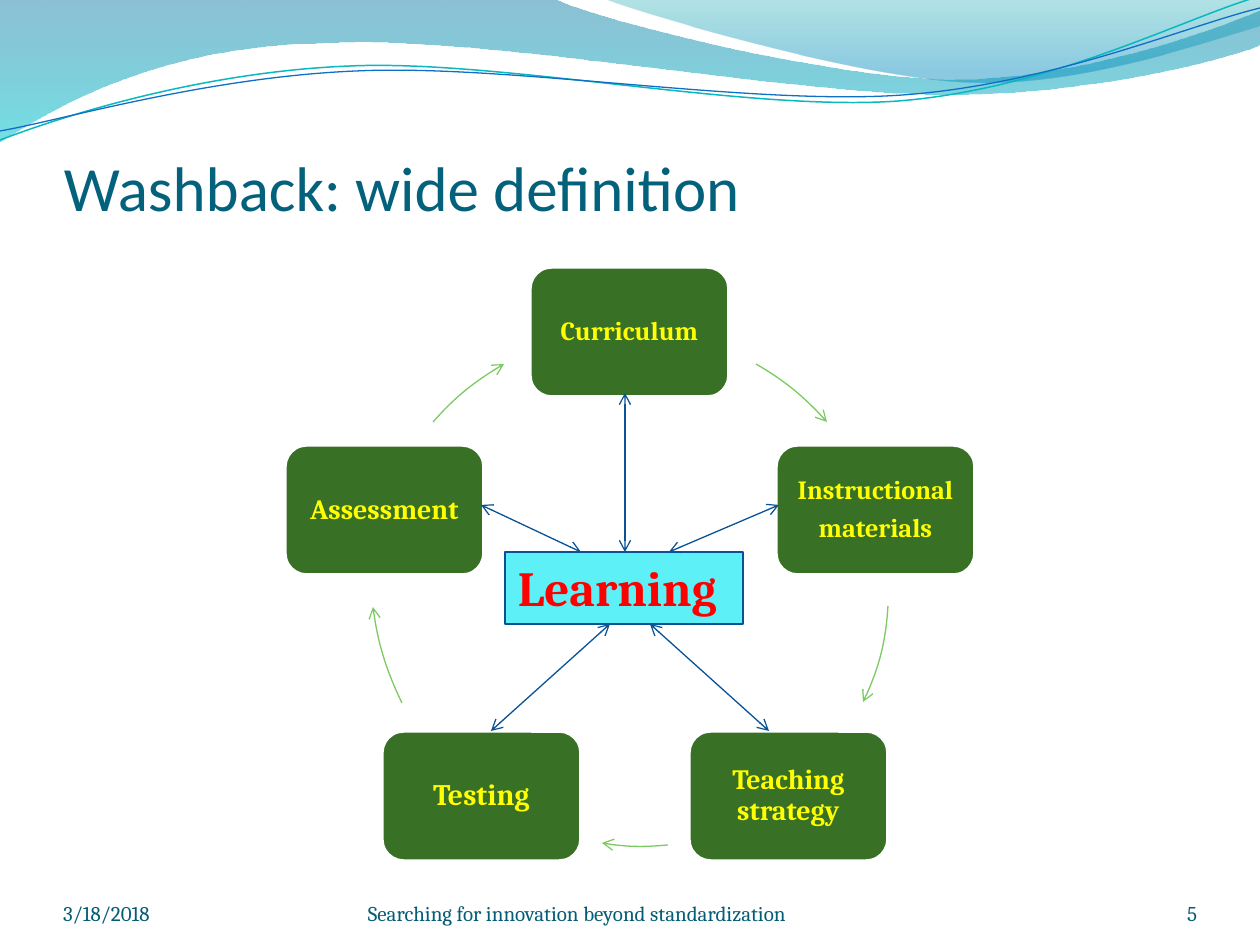
from lxml import etree
from pptx import Presentation
from pptx import util as u
from pptx.dml.color import RGBColor
from pptx.enum import shapes, text
from pptx.oxml.ns import qn

PX = 914400 // 126  # one px in EMU

THEME = {
    "title": "04617B", "footer": "045D75", "node": "387026", "node_text": "FFFF00",
    "node_edge": "FFFFFF", "cycle": "7CCA62", "link": "095295",
    "hub": "5EF0F7", "hub_text": "FF0000",
    "heading": "Calibri", "body": "Cambria",
    "title_size": 36, "hub_size": 28, "footer_size": 12,
}

# Content: lengths in px
TITLE = "Washback: wide definition"
HUB = ("Learning", (505, 552, 238, 72))
NODE_SIZE = (199, 130)
NODES = [  # paragraphs, left, top, type size
    (["Curriculum"], 530, 267, 15),
    (["Instructional ", "materials"], 776, 445, 15),
    (["Teaching strategy"], 689, 731, 16),
    (["Testing"], 382, 731, 17),
    (["Assessment"], 285, 445, 16),
]
LINKS = [  # from, to
    ((625, 393), (625, 552)),
    ((481, 505), (581, 552)),
    ((779, 505), (669, 552)),
    ((491, 731), (610, 624)),
    ((650, 624), (769, 731)),
]
FOOTERS = [
    ("3/18/2018", 63, 294, text.PP_ALIGN.LEFT),
    ("Searching for innovation beyond standardization", 368, 462, text.PP_ALIGN.LEFT),
    ("5", 1092, 105, text.PP_ALIGN.RIGHT),
]

# Outlines: start point, then segments (2 numbers = line, 6 = Bezier curve)
WAVES = [  # start, segments, gradient stops (position, colour, opacity %)
    ((0, 0), [(554, -1), (600, 21, 837, 79, 955, 79), (1075, 79, 1207, 33, 1260, 11),
              (1261, 45), (1239, 55, 1096, 96, 940, 94), (784, 94, 481, 35, 324, 43),
              (163, 45, 58, 105, -1, 142)],
     [(0, "0074A1", 45), (1, "00C6CF", 55)]),
    ((604, -1), [(641, 14, 859, 78, 969, 82), (1079, 87, 1211, 40, 1260, 26), (1260, 0)],
     [(0, "00A1A9", 30), (0.8, "008BBF", 45)]),
]
RIBBONS = [  # start, segments, colour, width
    ((0, 140), [(60, 117, 199, 72, 349, 66), (498, 59, 747, 112, 898, 101),
                (1050, 89, 1182, 19, 1257, -3)], "0AB8BF", 0.85),
    ((0, 131), [(59, 121, 207, 77, 357, 71), (508, 64, 752, 106, 903, 95),
                (1053, 84, 1186, 26, 1260, 8)], "0F6FC6", 0.75),
]
CYCLE = [
    ((756, 364), (782, 379, 806, 398, 827, 422)),
    ((888, 606), (886, 640, 878, 672, 863, 702)),
    ((668, 845), (646, 847, 624, 847, 602, 843)),
    ((402, 703), (387, 672, 377, 640, 373, 607)),
    ((433, 422), (454, 398, 478, 379, 504, 364)),
]


def rgb(name):
    return RGBColor.from_string(THEME.get(name, name))


def emu(values):
    return [v * PX for v in values]


def place(sp, box):
    sp.left, sp.top, sp.width, sp.height = emu(box)


def set_line(sp, color, width, ends=()):
    sp.line.color.rgb = rgb(color)
    sp.line.width = u.Pt(width)
    ln = sp.element.spPr.find(qn("a:ln"))
    for end in ends:
        etree.SubElement(ln, qn(f"a:{end}"), type="arrow")


def add_curve(s, start, segments, closed=False):
    points = [seg[i:i + 2] for seg in segments for i in range(0, len(seg), 2)]
    builder = s.shapes.build_freeform(*start, scale=PX)
    builder.add_line_segments(points, close=closed)
    sp = builder.convert_to_shape()
    sp.shadow.inherit = False
    # Merge each three control points into one Bezier segment
    steps = iter(list(sp.element.iter(qn("a:lnTo"))))
    for seg in segments:
        step = next(steps)
        if len(seg) == 6:
            step.tag = qn("a:cubicBezTo")
            bez = etree.Element(qn("a:cubicBezTo"))
            step.addprevious(bez)
            for part in (step, next(steps), next(steps)):
                bez.append(part[0])
                part.getparent().remove(part)
    return sp


def write(sp, lines, size, color, font="body", bold=False, align=text.PP_ALIGN.LEFT,
          anchor=text.MSO_ANCHOR.MIDDLE, insets=(0, 0, 0, 0)):
    tf = sp.text_frame
    tf.text = "\n".join(lines)
    tf.word_wrap = True
    tf.auto_size = text.MSO_AUTO_SIZE.NONE
    tf.vertical_anchor = anchor
    tf.margin_left, tf.margin_top, tf.margin_right, tf.margin_bottom = emu(insets)
    for p in tf.paragraphs:
        p.alignment = align
        for r in p.runs:
            r.font.name = THEME[font]
            r.font.size = u.Pt(size)
            r.font.bold = bold
            r.font.color.rgb = rgb(color)
    return tf


def add_box(s, kind, box, fill):
    sp = s.shapes.add_shape(kind, *emu(box))
    sp.shadow.inherit = False
    sp.fill.solid()
    sp.fill.fore_color.rgb = rgb(fill)
    return sp


def main():
    prs = Presentation()
    prs.slide_width, prs.slide_height = u.Inches(10), u.Inches(7.5)
    s = prs.slides.add_slide(prs.slide_layouts[5])

    # Header waves
    for start, segments, stops in WAVES:
        sp = add_curve(s, start, segments, closed=True)
        sp.line.fill.background()
        sp.fill.gradient()
        sp.fill.gradient_angle = 270
        for stop, (position, color, _) in zip(sp.fill.gradient_stops, stops):
            stop.position = position
            stop.color.rgb = rgb(color)
        for clr, (_, _, opacity) in zip(sp.element.spPr.iter(qn("a:srgbClr")), stops):
            etree.SubElement(clr, qn("a:alpha"), val=str(opacity * 1000))
    for start, segments, color, width in RIBBONS:
        sp = add_curve(s, start, segments)
        sp.fill.background()
        set_line(sp, color, width)

    # Title
    place(s.shapes.title, (64, 106, 1134, 118))
    write(s.shapes.title, [TITLE], THEME["title_size"], "title", font="heading",
          anchor=text.MSO_ANCHOR.BOTTOM, insets=(0, 6, 0, 0))

    # Cycle of nodes and arrows
    for lines, left, top, size in NODES:
        sp = add_box(s, shapes.MSO_SHAPE.ROUNDED_RECTANGLE, (left, top, *NODE_SIZE), "node")
        set_line(sp, "node_edge", 2)
        tf = write(sp, lines, size, "node_text", bold=True,
                   align=text.PP_ALIGN.CENTER, insets=(14, 14, 14, 14))
        for p in tf.paragraphs:
            p.line_spacing = 0.9
            p.space_after = u.Pt(round(size * 0.35, 1))
    for start, curve in CYCLE:
        sp = add_curve(s, start, [curve])
        sp.fill.background()
        set_line(sp, "cycle", 0.75, ["tailEnd"])

    # Hub and its links
    name, box = HUB
    sp = add_box(s, shapes.MSO_SHAPE.RECTANGLE, box, "hub")
    set_line(sp, "link", 0.75)
    write(sp, [name], THEME["hub_size"], "hub_text", bold=True,
          anchor=text.MSO_ANCHOR.TOP, insets=(13, 6, 13, 6))
    for start, end in LINKS:
        link = s.shapes.add_connector(shapes.MSO_CONNECTOR.STRAIGHT, *emu(start + end))
        set_line(link, "link", 0.75, ["headEnd", "tailEnd"])
        etree.SubElement(link.element.spPr, qn("a:effectLst"))

    # Footer
    for label, left, width, align in FOOTERS:
        sp = s.shapes.add_textbox(*emu((left, 876, width, 50)))
        write(sp, [label], THEME["footer_size"], "footer", align=align,
              anchor=text.MSO_ANCHOR.BOTTOM)

    prs.save("out.pptx")


if __name__ == "__main__":
    main()
